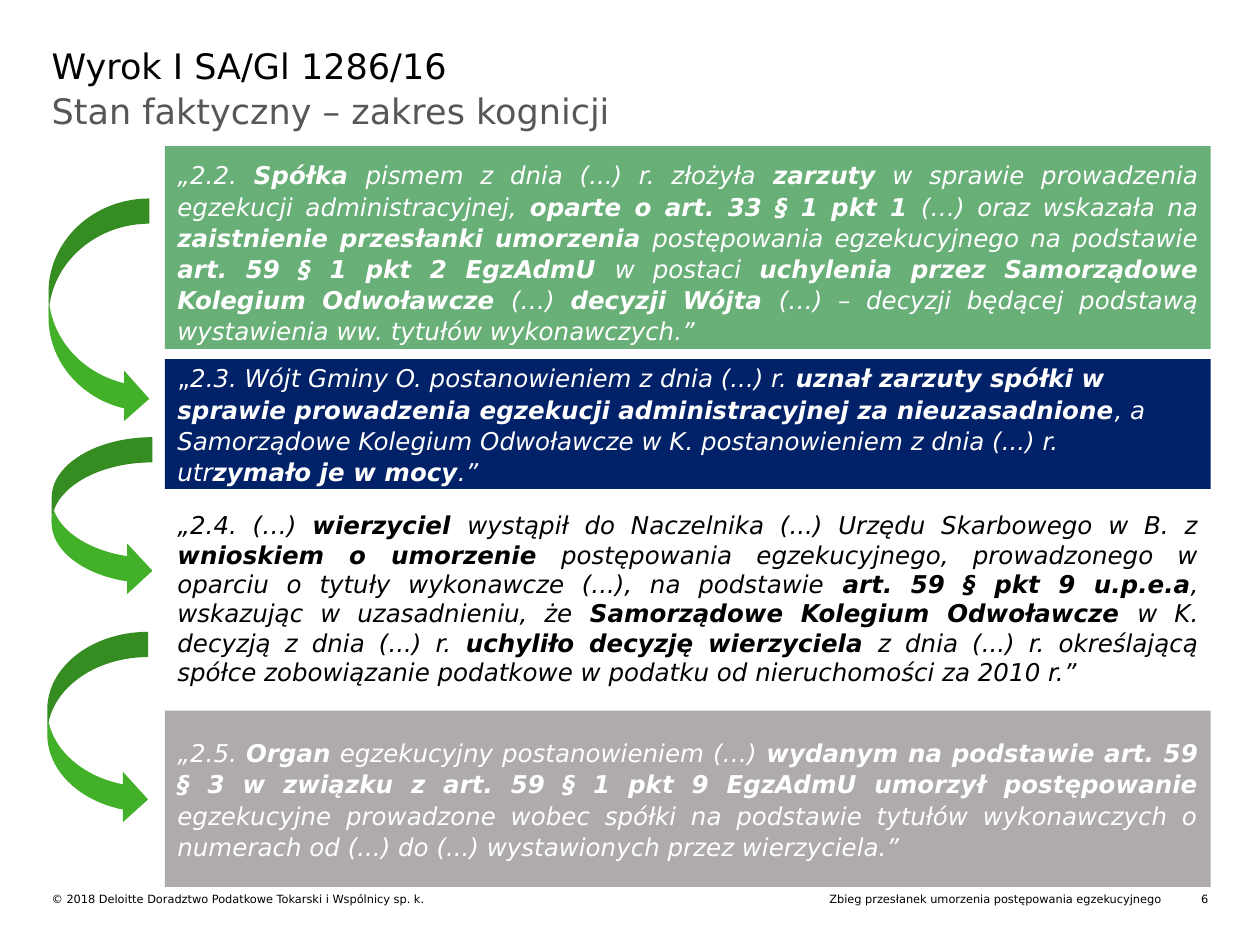
from dataclasses import dataclass
from typing import NamedTuple, Optional

from pptx import Presentation
from pptx import util as u
from pptx.dml.color import RGBColor
from pptx.enum import shapes, text

SLIDE_WIDTH, SLIDE_HEIGHT = u.Inches(10), u.Inches(7.5)
COLUMNS, ROWS = 100, 75
FONT = "DejaVu Sans"
BLACK, WHITE, GREY = "000000", "FFFFFF", "575757"
ARROW_GREEN = "43B02A"
MARGIN = 4.1
PASSAGE_LEFT, PASSAGE_WIDTH = 13.1, 83
LEFT, RIGHT, JUSTIFY = text.PP_ALIGN.LEFT, text.PP_ALIGN.RIGHT, text.PP_ALIGN.JUSTIFY
TOP, MIDDLE = text.MSO_ANCHOR.TOP, text.MSO_ANCHOR.MIDDLE


class Frame(NamedTuple):
    """A place on the slide, in grid columns and rows."""
    column: float
    row: float
    columns: float
    rows: float

    def lengths(self) -> tuple[int, int, int, int]:
        return (int(SLIDE_WIDTH * self.column / COLUMNS), int(SLIDE_HEIGHT * self.row / ROWS),
                int(SLIDE_WIDTH * self.columns / COLUMNS), int(SLIDE_HEIGHT * self.rows / ROWS))


@dataclass
class Label:
    frame: Frame
    wording: str
    size: float
    color: str = BLACK
    align: text.PP_ALIGN = LEFT


@dataclass
class Passage:
    """A quotation whose pieces alternate between regular and bold."""
    row: float
    rows: float
    pieces: list[str]
    fill: Optional[str] = None
    color: str = WHITE
    align: text.PP_ALIGN = JUSTIFY
    anchor: text.MSO_ANCHOR = MIDDLE
    line_spacing: float = 1.06
    inset: tuple[float, float] = (0.1, 0.1)
    upright_opening: str = ""


LABELS = [
    Label(Frame(MARGIN, 3.5, 91.8, 4.4), "Wyrok I SA/Gl 1286/16", 20),
    Label(Frame(MARGIN, 7.1, 91.8, 8.3), "Stan faktyczny – zakres kognicji", 20, GREY),
    Label(Frame(MARGIN, 70.8, 43.9, 1.1),
          "© 2018 Deloitte Doradztwo Podatkowe Tokarski i Wspólnicy sp. k.", 6.5),
    Label(Frame(52, 70.8, 40.2, 1.1),
          "Zbieg przesłanek umorzenia postępowania egzekucyjnego", 6.5, align=RIGHT),
    Label(Frame(93.4, 70.8, 2.5, 1.1), "6", 6.5, align=RIGHT),
]

PASSAGES = [
    Passage(11.6, 16.1, [
        "„2.2. ", "Spółka ", "pismem z dnia (...) r. złożyła ", "zarzuty",
        " w sprawie prowadzenia egzekucji administracyjnej, ", "oparte o art. 33 § 1 pkt 1 ",
        "(…) oraz wskazała na ", "zaistnienie przesłanki umorzenia",
        " postępowania egzekucyjnego na podstawie ", "art. 59 § 1 pkt 2 EgzAdmU ",
        "w postaci ", "uchylenia przez Samorządowe Kolegium Odwoławcze ", "(…) ",
        "decyzji Wójta ",
        "(…) – decyzji będącej podstawą wystawienia ww. tytułów wykonawczych.”",
    ], fill="69AF78", anchor=TOP),
    Passage(28.5, 10.3, [
        "2.3. Wójt Gminy O. postanowieniem z dnia (...) r. ",
        "uznał zarzuty spółki w sprawie prowadzenia egzekucji administracyjnej za nieuzasadnione",
        ", a Samorządowe Kolegium Odwoławcze w K. postanowieniem z dnia (...) r. utr",
        "zymało je w mocy", ".”",
    ], fill="012169", align=LEFT, upright_opening="„"),
    Passage(40, 15.1, [
        "„2.4. (…) ", "wierzyciel ", "wystąpił do Naczelnika (...) Urzędu Skarbowego w B. z ",
        "wnioskiem o umorzenie",
        " postępowania egzekucyjnego, prowadzonego w oparciu o tytuły wykonawcze (...), na podstawie ",
        "art. 59 § pkt 9 u.p.e.a", ", wskazując w uzasadnieniu, że ",
        "Samorządowe Kolegium Odwoławcze ", "w K. decyzją z dnia (...) r. ",
        "uchyliło decyzję wierzyciela ",
        "z dnia (...) r. określającą spółce zobowiązanie podatkowe w podatku od nieruchomości"
        " za 2010 r.”",
    ], color=BLACK, anchor=TOP, line_spacing=1.0, inset=(0.1, 0.05)),
    Passage(56.4, 14, [
        "„2.5. ", "Organ", " egzekucyjny postanowieniem (…) ",
        "wydanym na podstawie art. 59 § 3 w związku z art. 59 § 1 pkt 9 EgzAdmU umorzył"
        " postępowanie ",
        "egzekucyjne prowadzone wobec spółki na podstawie tytułów wykonawczych o numerach"
        " od (...) do (...) wystawionych przez wierzyciela.”",
    ], fill="AFABAB"),
]

# Frames before the quarter turn
ARROWS = [Frame(-1.1, 20.7, 17.9, 8), Frame(1.8, 37, 12.6, 8), Frame(0.1, 53.8, 15.3, 8)]


def rgb(color: str) -> RGBColor:
    return RGBColor.from_string(color)


def add_run(paragraph, wording: str, size: float, color: str,
            bold: bool = False, italic: bool = False) -> None:
    run = paragraph.add_run()
    run.text = wording
    run.font.name, run.font.size = FONT, u.Pt(size)
    run.font.bold, run.font.italic = bold, italic
    run.font.color.rgb = rgb(color)


def prepare_text(shape, align: text.PP_ALIGN, anchor: text.MSO_ANCHOR,
                 inset: tuple[float, float] = (0, 0)):
    """Set up the text frame and return its first paragraph."""
    frame = shape.text_frame
    frame.word_wrap = True
    frame.vertical_anchor = anchor
    frame.margin_left = frame.margin_right = u.Inches(inset[0])
    frame.margin_top = frame.margin_bottom = u.Inches(inset[1])
    paragraph = frame.paragraphs[0]
    paragraph.alignment = align
    return paragraph


def add_filled_shape(slide, kind: shapes.MSO_SHAPE, frame: Frame, fill: str):
    shape = slide.shapes.add_shape(kind, *frame.lengths())
    shape.shadow.inherit = False
    shape.fill.solid()
    shape.fill.fore_color.rgb = rgb(fill)
    shape.line.fill.background()
    return shape


def add_label(slide, label: Label) -> None:
    shape = slide.shapes.add_textbox(*label.frame.lengths())
    add_run(prepare_text(shape, label.align, TOP), label.wording, label.size, label.color)


def add_passage(slide, passage: Passage) -> None:
    frame = Frame(PASSAGE_LEFT, passage.row, PASSAGE_WIDTH, passage.rows)
    if passage.fill:
        shape = add_filled_shape(slide, shapes.MSO_SHAPE.RECTANGLE, frame, passage.fill)
    else:
        shape = slide.shapes.add_textbox(*frame.lengths())
    paragraph = prepare_text(shape, passage.align, passage.anchor, passage.inset)
    paragraph.line_spacing = passage.line_spacing
    if passage.upright_opening:
        add_run(paragraph, passage.upright_opening, 14, passage.color)
    for index, piece in enumerate(passage.pieces):
        add_run(paragraph, piece, 14, passage.color, bold=index % 2 == 1, italic=True)


def add_arrow(slide, frame: Frame) -> None:
    arrow = add_filled_shape(slide, shapes.MSO_SHAPE.CURVED_UP_ARROW, frame, ARROW_GREEN)
    arrow.rotation = 90


def main() -> None:
    presentation = Presentation()
    presentation.slide_width, presentation.slide_height = SLIDE_WIDTH, SLIDE_HEIGHT
    slide = presentation.slides.add_slide(presentation.slide_layouts[6])
    for label in LABELS:
        add_label(slide, label)
    for passage in PASSAGES:
        add_passage(slide, passage)
    for frame in ARROWS:
        add_arrow(slide, frame)
    presentation.save("out.pptx")


if __name__ == "__main__":
    main()
